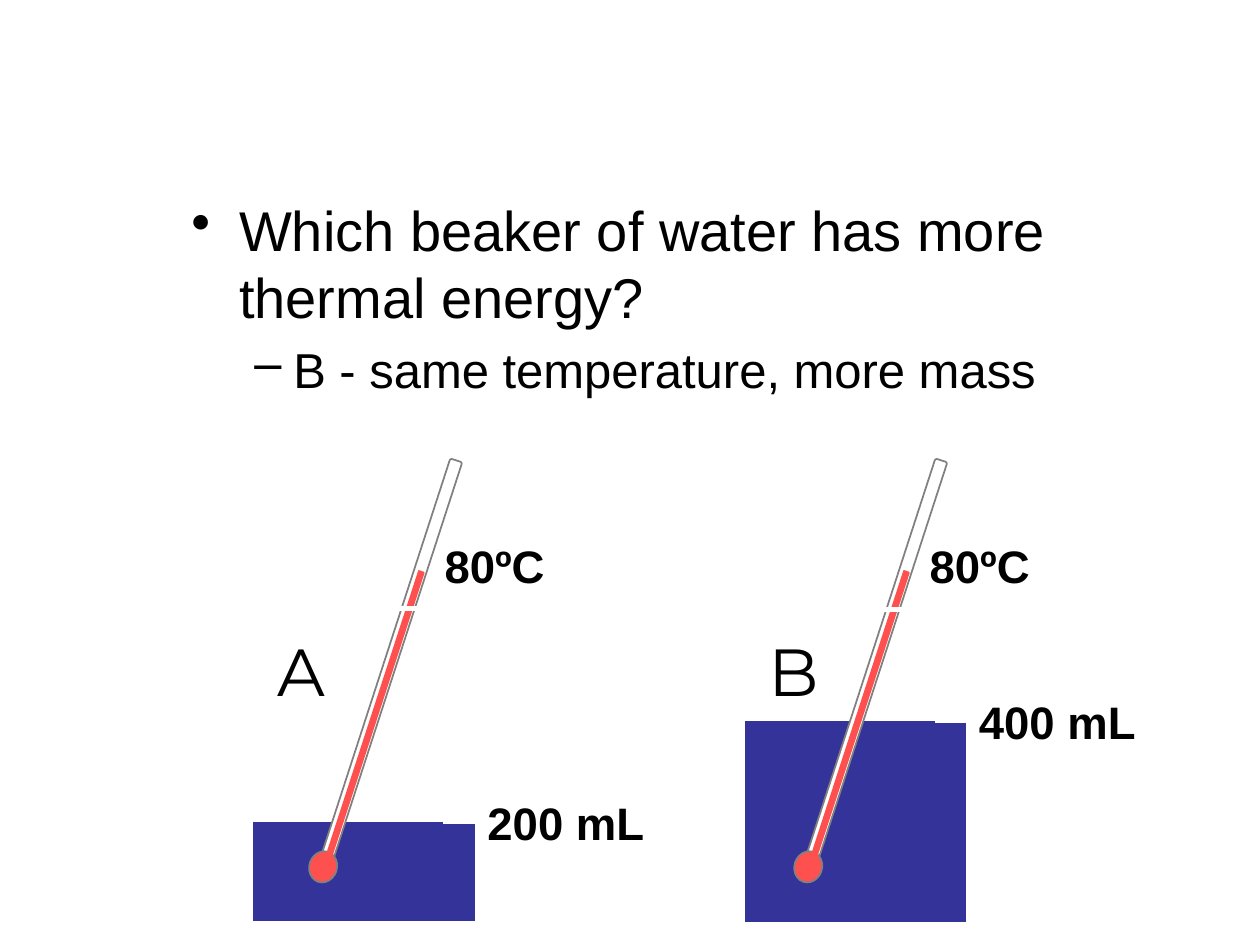
from lxml import etree
from pptx import Presentation
from pptx.dml.color import RGBColor
from pptx.enum.shapes import MSO_CONNECTOR, MSO_SHAPE
from pptx.oxml.ns import qn
from pptx.util import Inches, Pt

RECT = MSO_SHAPE.RECTANGLE
ROUND = MSO_SHAPE.ROUNDED_RECTANGLE
OVAL = MSO_SHAPE.OVAL
LINE = MSO_CONNECTOR.STRAIGHT

COLORS = {
    "text": "000000",
    "water": "333399",
    "glass": "FFFFFF",
    "rim": "808080",
    "red": "FF5050",
}
TILT = 288


def color(name):
    """Return the named colour."""
    return RGBColor.from_string(COLORS[name])


def add_run(para, text, size, font="Arial", bold=False):
    """Add one styled run to a paragraph."""
    run = para.add_run()
    run.text = text
    run.font.name = font
    run.font.size = Pt(size)
    run.font.bold = bold
    run.font.color.rgb = color("text")


def add_label(slide, box, text, size=26, font="Arial", bold=True):
    """Place a one-line label in a box."""
    frame = slide.shapes.add_textbox(*map(Inches, box)).text_frame
    frame.word_wrap = False
    add_run(frame.paragraphs[0], text, size, font, bold)


def add_form(slide, kind, box, fill, line, width=1, turn=0):
    """Place a flat preset shape, unfilled if fill is None."""
    form = slide.shapes.add_shape(kind, *map(Inches, box))
    form.shadow.inherit = False
    form.rotation = turn
    if fill:
        form.fill.solid()
        form.fill.fore_color.rgb = color(fill)
    else:
        form.fill.background()
    form.line.color.rgb = color(line)
    form.line.width = Pt(width)


def add_tick(slide, x, y, length):
    """Draw the white mark at the water level."""
    tick = slide.shapes.add_connector(
        LINE, Inches(x), Inches(y), Inches(x + length), Inches(y))
    tick.line.color.rgb = color("glass")
    tick.line.width = Pt(3)
    etree.SubElement(tick._element.spPr, qn("a:effectLst"))


def add_bullet(para, mark, left, hang):
    """Give a paragraph a hanging bullet."""
    props = para._p.get_or_add_pPr()
    props.set("marL", str(Inches(left)))
    props.set("indent", str(-Inches(hang)))
    etree.SubElement(props, qn("a:buChar")).set("char", mark)


def add_quiz(slide, x, y, width, height):
    """Write the question and its answer."""
    box = slide.shapes.add_textbox(*map(Inches, (x, y, width, height)))
    frame = box.text_frame
    frame.word_wrap = True
    ask = frame.paragraphs[0]
    reply = frame.add_paragraph()
    reply.level = 1
    rows = [
        (ask, "Which beaker of water has more thermal energy?", 32, "•", 0.38, 0.38),
        (reply, "B - same temperature, more mass", 28, "–", 0.81, 0.31),
    ]
    for para, text, size, mark, left, hang in rows:
        para.space_before = Pt(size * 0.2)
        add_bullet(para, mark, left, hang)
        add_run(para, text, size)


def add_gauge(slide, x, y):
    """Draw a tilted thermometer with its bulb and red column."""
    add_form(slide, ROUND, (x, y, 3.44, 0.1), "glass", "rim", turn=TILT)
    add_form(slide, OVAL, (x + 1.07, y + 1.53, 0.25, 0.22), "red", "rim", turn=TILT)
    add_form(slide, RECT, (x + 0.43, y + 0.4, 2.36, 0.04), "red", "red", turn=TILT)


def add_beaker(slide, x, y, depth, gauge, name, amount):
    """Draw a beaker with water, thermometer and labels."""
    width, height = 1.8, 2.5
    level = y + height - depth
    add_form(slide, RECT, (x, level, width, depth), "water", "water")
    add_tick(slide, x + 1.53, level - 0.01, 0.26)
    add_gauge(slide, gauge, 5.24)
    add_form(slide, RECT, (x, y, width, height), None, "glass", 3)
    add_label(slide, (x + 1.78, level - 0.27, 1.45, 0.53), amount)
    add_label(slide, (gauge + 2.06, 4.22, 1, 0.53), "80ºC")
    add_label(slide, (x + 0.11, 4.95, 0.61, 0.73), name, 38, "Montserrat", False)


def main():
    """Build and save the slide."""
    deck = Presentation()
    deck.slide_width, deck.slide_height = Inches(10), Inches(7.5)
    slide = deck.slides.add_slide(deck.slide_layouts[6])
    add_quiz(slide, 1.42, 1.5, 8.34, 2.16)
    add_beaker(slide, 1.99, 4.83, 0.8, 1.37, "A", "200 mL")
    add_beaker(slide, 5.89, 4.84, 1.61, 5.22, "B", "400 mL")
    deck.save("out.pptx")


if __name__ == "__main__":
    main()
